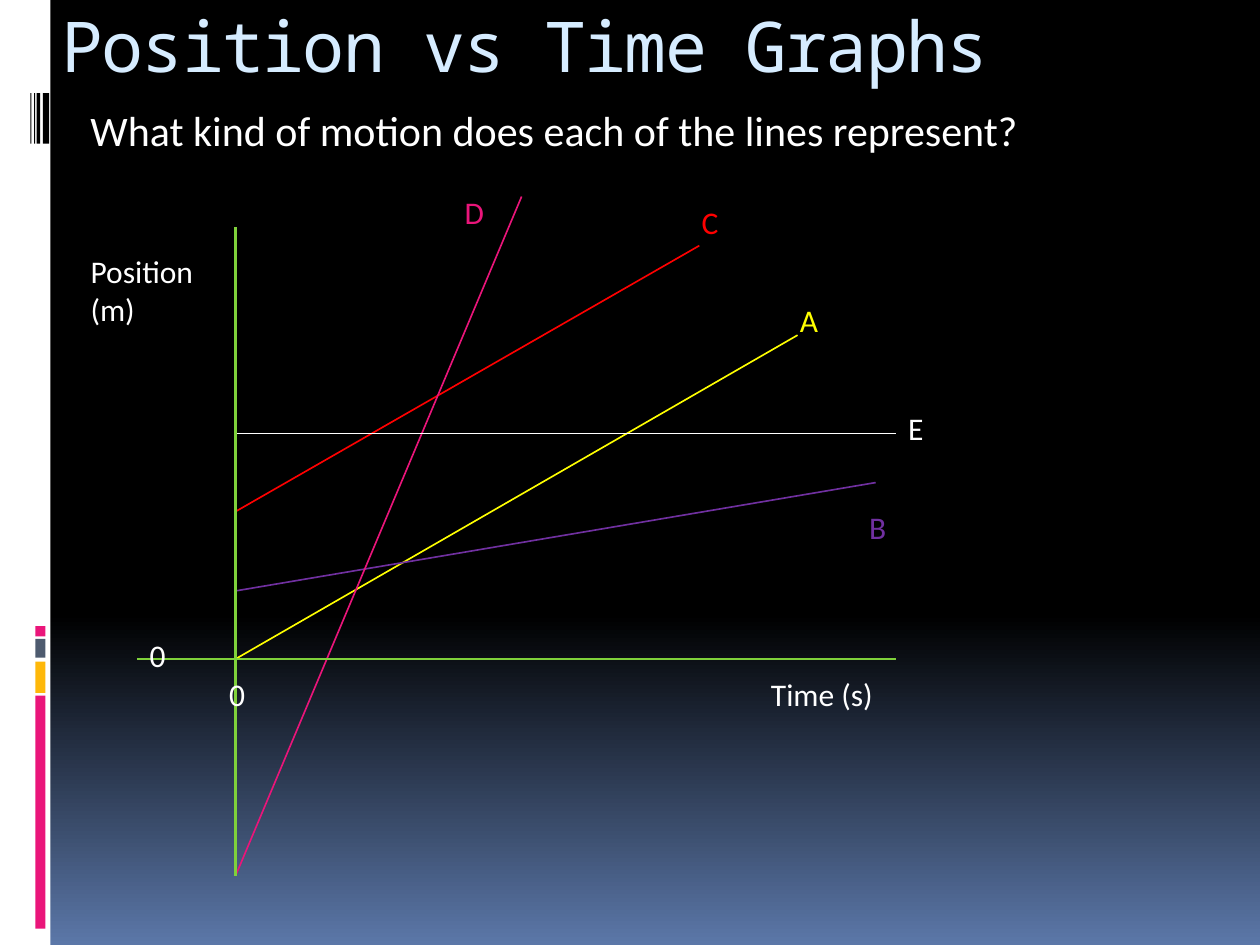
from copy import deepcopy
from typing import NamedTuple

from pptx import Presentation
from pptx.dml.color import RGBColor
from pptx.enum.shapes import MSO_CONNECTOR, MSO_SHAPE
from pptx.oxml.ns import qn
from pptx.util import Inches, Pt
from lxml.etree import SubElement

COLORS = {
    "black": "000000", "white": "FFFFFF", "dusk": "5B77A8", "title": "D6ECFF",
    "pink": "EA157A", "amber": "FEB80A", "slate": "4E5B6F", "green": "7FD13B",
    "yellow": "FFFF00", "red": "FF0000", "purple": "7030A0",
}
AXIS_LEFT = 1.87
AXIS_RIGHT = 7.11
ZERO_LEVEL = 5.23
LABEL_WIDTH = 0.47
LABEL_HEIGHT = 0.4


class Bar(NamedTuple):
    left: float
    top: float
    width: float
    height: float
    color: str


class Motion(NamedTuple):
    """A plotted line starting on the position axis, with its letter."""
    letter: str
    color: str
    start_y: float
    end: tuple[float, float]
    label: tuple[float, float]


class Label(NamedTuple):
    text: str
    left: float
    top: float
    width: float
    height: float = LABEL_HEIGHT
    size: float = 18
    color: str = "white"
    font: str = "Calibri"


BARS = [
    Bar(0, 0, 0.4, 7.5, "white"),
    *(Bar(0.28, top, 0.08, height, color) for top, height, color in [
        (5.52, 1.85, "pink"), (5.25, 0.25, "amber"),
        (5.07, 0.15, "slate"), (4.97, 0.08, "pink")]),
    *(Bar(left, 0.74, width, 0.4, "black") for left, width in [
        (0.34, 0.05), (0.29, 0.03), (0.27, 0.01), (0.24, 0.01)]),
]
MOTIONS = [
    Motion("A", "yellow", ZERO_LEVEL, (6.33, 2.66), (6.25, 2.34)),
    Motion("C", "red", 4.06, (5.55, 1.95), (5.47, 1.56)),
    Motion("B", "purple", 4.69, (6.95, 3.83), (6.8, 3.98)),
    Motion("D", "pink", 6.95, (4.14, 1.56), (3.59, 1.48)),
    Motion("E", "white", 3.44, (AXIS_RIGHT, 3.44), (AXIS_RIGHT, 3.2)),
]
TITLE = Label("Position vs Time Graphs", 0.39, 0, 8.5, 1, 40, "title", "Noto Sans Mono")
QUESTION = Label("What kind of motion does each of the lines represent?",
                 0.62, 0.78, 8.2, 0.5, 24)
AXIS_LABELS = [
    Label("Position (m)", 0.62, 1.95, 1.09, 0.71),
    Label("Time (s)", 6.02, 5.31, 1.09),
    Label("0", 1.09, 5, LABEL_WIDTH),
    Label("0", 1.72, 5.31, LABEL_WIDTH),
]


def rgb(name: str) -> RGBColor:
    return RGBColor.from_string(COLORS[name])


def fill_background(slide) -> None:
    """Black down to 65 % of the height, then fading to dusk blue."""
    fill = slide.background.fill
    fill.gradient()
    fill.gradient_angle = 270
    first_stop = slide.element.find(".//" + qn("a:gs"))
    first_stop.addnext(deepcopy(first_stop))
    stops = [(0, "black"), (0.65, "black"), (1, "dusk")]
    for stop, (position, color) in zip(fill.gradient_stops, stops):
        stop.position = position
        stop.color.rgb = rgb(color)


def add_bar(slide, bar: Bar) -> None:
    shape = slide.shapes.add_shape(
        MSO_SHAPE.RECTANGLE, Inches(bar.left), Inches(bar.top),
        Inches(bar.width), Inches(bar.height))
    shape.shadow.inherit = False
    shape.fill.solid()
    shape.fill.fore_color.rgb = rgb(bar.color)
    shape.line.fill.background()


def add_line(slide, start: tuple[float, float], end: tuple[float, float],
             color: str, width: float = 0.94) -> None:
    connector = slide.shapes.add_connector(
        MSO_CONNECTOR.STRAIGHT, *(Inches(value) for value in (*start, *end)))
    connector.line.color.rgb = rgb(color)
    connector.line.width = Pt(width)
    SubElement(connector.element.spPr, qn("a:effectLst"))


def add_label(slide, label: Label):
    shape = slide.shapes.add_textbox(
        Inches(label.left), Inches(label.top),
        Inches(label.width), Inches(label.height))
    text_frame = shape.text_frame
    text_frame.word_wrap = True
    text_frame.text = label.text
    font = text_frame.paragraphs[0].runs[0].font
    font.name = label.font
    font.size = Pt(label.size)
    font.color.rgb = rgb(label.color)
    return shape


def add_title(slide) -> None:
    text_frame = add_label(slide, TITLE).text_frame
    text_frame.margin_top = Inches(0.02)
    run = text_frame.paragraphs[0].runs[0]
    run.font._element.set("spc", "-100")


def add_motion(slide, motion: Motion) -> None:
    add_line(slide, (AXIS_LEFT, motion.start_y), motion.end, motion.color)
    add_label(slide, Label(motion.letter, *motion.label, LABEL_WIDTH, color=motion.color))


def main() -> None:
    presentation = Presentation()
    presentation.slide_width = Inches(10)
    presentation.slide_height = Inches(7.5)
    slide = presentation.slides.add_slide(presentation.slide_layouts[6])

    fill_background(slide)
    for bar in BARS:
        add_bar(slide, bar)
    add_title(slide)
    for motion in MOTIONS:
        add_motion(slide, motion)
    add_label(slide, QUESTION)
    add_line(slide, (AXIS_LEFT, 1.8), (AXIS_LEFT, 6.95), "green", 2)
    add_line(slide, (1.09, ZERO_LEVEL), (AXIS_RIGHT, ZERO_LEVEL), "green")
    for label in AXIS_LABELS:
        add_label(slide, label)

    presentation.save("out.pptx")


if __name__ == "__main__":
    main()
